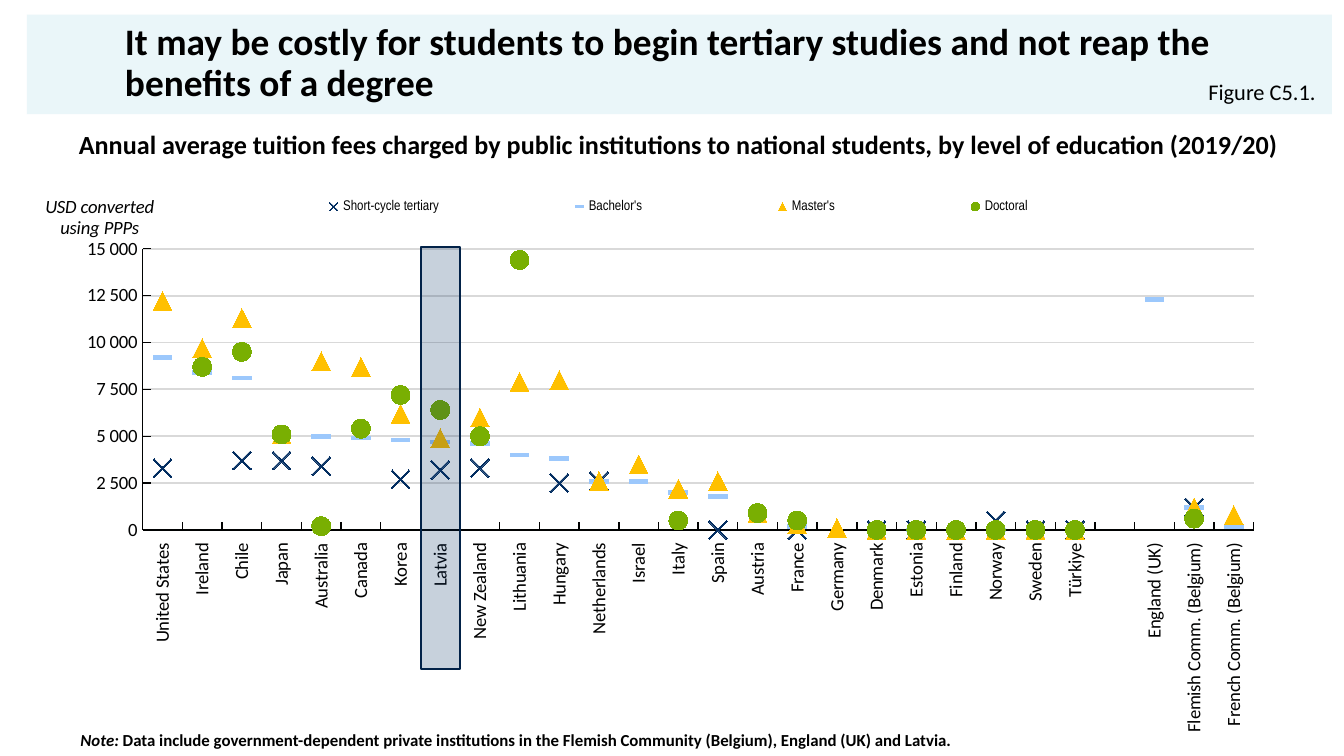
import pptx
import pptx.chart.data
import pptx.dml.color
import pptx.enum.chart
import pptx.enum.shapes
import pptx.enum.text
import pptx.oxml
import pptx.oxml.ns
import pptx.util

Inches = pptx.util.Inches
Pt = pptx.util.Pt
RGBColor = pptx.dml.color.RGBColor
XL = pptx.enum.chart
ALIGN = pptx.enum.text.PP_ALIGN
ANCHOR = pptx.enum.text.MSO_ANCHOR
qn = pptx.oxml.ns.qn

BLACK = RGBColor(0x00, 0x00, 0x00)
AXIS = RGBColor(0x00, 0x01, 0x01)
GRID = RGBColor(0xD9, 0xD9, 0xD9)
BANNER = RGBColor(0x6F, 0xC5, 0xD5)
NAVY = RGBColor(0x03, 0x2E, 0x61)
DARK_NAVY = RGBColor(0x02, 0x22, 0x48)
LIGHT_BLUE = RGBColor(0x9C, 0xC8, 0xFC)
YELLOW = RGBColor(0xFF, 0xC0, 0x00)
GREEN = RGBColor(0x79, 0xAF, 0x02)

COUNTRIES = [
    "United States", "Ireland", "Chile", "Japan", "Australia", "Canada", "Korea",
    "Latvia", "New Zealand", "Lithuania", "Hungary", "Netherlands", "Israel", "Italy",
    "Spain", "Austria", "France", "Germany", "Denmark", "Estonia", "Finland", "Norway",
    "Sweden", "Türkiye", "", "England (UK)", "Flemish Comm. (Belgium)",
    "French Comm. (Belgium)",
]
LEVELS = [
    ("Short-cycle tertiary", XL.XL_MARKER_STYLE.X, None,
     [3300, None, 3700, 3700, 3400, None, 2700, 3200, 3300, None, 2500, 2600, None, None,
      0, None, 0, None, 0, 0, None, 500, 0, 0, None, None, 1200, None]),
    ("Bachelor's", XL.XL_MARKER_STYLE.DASH, LIGHT_BLUE,
     [9200, 8400, 8100, 5100, 5000, 4900, 4800, 4700, 4600, 4000, 3800, 2600, 2600, 2000,
      1800, 900, 200, None, 0, 0, 0, 0, 0, 0, None, 12300, 1200, 200]),
    ("Master's", XL.XL_MARKER_STYLE.TRIANGLE, YELLOW,
     [12200, 9700, 11300, 5100, 9000, 8700, 6200, 4900, 6000, 7900, 8000, 2600, 3500, 2200,
      2600, 900, 300, 100, 0, 0, 0, 0, 0, 0, None, None, 1200, 800]),
    ("Doctoral", XL.XL_MARKER_STYLE.CIRCLE, GREEN,
     [None, 8700, 9500, 5100, 200, 5400, 7200, 6400, 5000, 14400, None, None, None, 500,
      None, 900, 500, None, 0, 0, 0, 0, 0, 0, None, None, 600, None]),
]


def set_font(font, size, color=BLACK, name="Calibri", bold=False, italic=False):
    font.name = name
    font.size = Pt(size)
    font.color.rgb = color
    font.bold = bold
    font.italic = italic


def add_run(p, text, size, **style):
    r = p.add_run()
    r.text = text
    set_font(r.font, size, **style)


def place(sp, left, top, width, height):
    sp.left, sp.top = Inches(left), Inches(top)
    sp.width, sp.height = Inches(width), Inches(height)


def fill_placeholder(sp, box, text, size, align, anchor=ANCHOR.TOP, bold=True):
    place(sp, *box)
    tf = sp.text_frame
    tf.word_wrap = True
    tf.auto_size = pptx.enum.text.MSO_AUTO_SIZE.NONE
    tf.vertical_anchor = anchor
    p = tf.paragraphs[0]
    pPr = p._p.get_or_add_pPr()
    pPr.set("marL", "0")
    pPr.set("indent", "0")
    pPr.append(pptx.oxml.parse_xml(f"<a:buNone {pptx.oxml.ns.nsdecls('a')}/>"))
    p.alignment = align
    p.line_spacing = 0.9
    p.space_before = Pt(0)
    add_run(p, text, size, bold=bold)


def add_tinted_rect(s, box, color, opacity, line=None):
    sp = s.shapes.add_shape(pptx.enum.shapes.MSO_SHAPE.RECTANGLE, *map(Inches, box))
    sp.shadow.inherit = False
    sp.fill.solid()
    sp.fill.fore_color.rgb = color
    clr = sp._element.spPr.find(f"{qn('a:solidFill')}/{qn('a:srgbClr')}")
    clr.append(pptx.oxml.parse_xml(
        f"<a:alpha {pptx.oxml.ns.nsdecls('a')} val=\"{opacity * 1000}\"/>"))
    if line is None:
        sp.line.fill.background()
    else:
        sp.line.color.rgb = line
        sp.line.width = Pt(1)
    return sp


def send_to_back(s, sp):
    s.shapes._spTree.insert(2, sp._element)


def set_layout(element, index, x, y, w=None, h=None, inner=False):
    for old in element.findall(qn("c:layout")):
        element.remove(old)
    parts = [("layoutTarget", "inner")] if inner else []
    parts += [("xMode", "edge"), ("yMode", "edge"), ("x", x), ("y", y)]
    if w is not None:
        parts += [("w", w), ("h", h)]
    body = "".join(f'<c:{tag} val="{val}"/>' for tag, val in parts)
    element.insert(index, pptx.oxml.parse_xml(
        f"<c:layout {pptx.oxml.ns.nsdecls('c')}><c:manualLayout>{body}"
        "</c:manualLayout></c:layout>"))


def style_axis(axis):
    set_font(axis.tick_labels.font, 10, AXIS)
    axis.major_tick_mark = XL.XL_TICK_MARK.INSIDE
    axis.minor_tick_mark = XL.XL_TICK_MARK.NONE
    axis.format.line.color.rgb = AXIS
    axis.format.line.width = Pt(0.75)


def style_value_axis(axis):
    style_axis(axis)
    axis.minimum_scale, axis.maximum_scale, axis.major_unit = 0, 15000, 2500
    axis.tick_labels.number_format = "#\\ ##0"
    axis.tick_labels.number_format_is_linked = False
    axis.has_major_gridlines = True
    axis.major_gridlines.format.line.color.rgb = GRID
    axis.major_gridlines.format.line.width = Pt(1)
    tf = axis.axis_title.text_frame
    add_run(tf.paragraphs[0], "USD converted", 10, color=AXIS, italic=True)
    add_run(tf.add_paragraph(), "using PPPs", 10, color=AXIS, italic=True)
    tf._txBody.find(qn("a:bodyPr")).set("rot", "0")
    set_layout(axis.axis_title._element, 1, 0.01, 0.02)


def style_series(series, style, color):
    series.smooth = False
    series.format.line.fill.background()
    marker = series.marker
    marker.style = style
    marker.size = 10
    if color is None:
        marker.format.fill.background()
        marker.format.line.color.rgb = NAVY
        marker.format.line.width = Pt(1.25)
    else:
        marker.format.fill.solid()
        marker.format.fill.fore_color.rgb = color
        marker.format.line.fill.background()


def add_fee_chart(s, box):
    data = pptx.chart.data.CategoryChartData()
    data.categories = COUNTRIES
    for name, _, _, values in LEVELS:
        data.add_series(name, values)
    chart = s.shapes.add_chart(
        XL.XL_CHART_TYPE.LINE_MARKERS, *map(Inches, box), data).chart
    set_font(chart.font, 8, name="Arial Narrow")
    chart.has_title = False
    chart.plots[0].vary_by_categories = False
    for series, (_, style, color, _) in zip(chart.plots[0].series, LEVELS):
        style_series(series, style, color)
    style_axis(chart.category_axis)
    chart.category_axis.tick_label_position = XL.XL_TICK_LABEL_POSITION.LOW
    txPr = chart.category_axis._element.find(qn("c:txPr"))
    txPr.find(qn("a:bodyPr")).set("rot", "-5400000")
    style_value_axis(chart.value_axis)
    chart.has_legend = True
    chart.legend.position = XL.XL_LEGEND_POSITION.TOP
    chart.legend.include_in_layout = True
    set_font(chart.legend.font, 7.5, name="Arial Narrow")
    set_layout(chart.legend._element, 1, 0.13, 0.03, 0.74, 0.04)
    plot_area = chart._chartSpace.chart.plotArea
    set_layout(plot_area, 0, 0.088, 0.125, 0.854, 0.502, inner=True)


def add_note(s, box):
    tf = s.shapes.add_textbox(*map(Inches, box)).text_frame
    tf.word_wrap = True
    p = tf.paragraphs[0]
    add_run(p, "Note: ", 9, bold=True, italic=True)
    add_run(p, "Data include government-dependent private institutions in the Flemish "
               "Community (Belgium), England (UK) and Latvia.", 9, bold=True)


def main():
    prs = pptx.Presentation()
    prs.slide_width, prs.slide_height = Inches(10), Inches(10 * 9 / 16)
    s = prs.slides.add_slide(prs.slide_layouts[3])
    title, subtitle, figure = s.placeholders
    send_to_back(s, add_tinted_rect(s, (0.2, 0.11, 9.71, 0.74), BANNER, 14))
    fill_placeholder(title, (0.83, 0.17, 8.84, 0.61),
                     "It may be costly for students to begin tertiary studies "
                     "and not reap the benefits of a degree",
                     20, ALIGN.LEFT, ANCHOR.MIDDLE)
    fill_placeholder(subtitle, (0.21, 0.93, 9.68, 0.31),
                     "Annual average tuition fees charged by public institutions "
                     "to national students, by level of education (2019/20)",
                     14, ALIGN.CENTER)
    fill_placeholder(figure, (8.68, 0.55, 1.21, 0.23), "Figure C5.1.",
                     12, ALIGN.RIGHT, bold=False)
    add_fee_chart(s, (0.21, 1.33, 9.68, 4.17))
    add_tinted_rect(s, (3.13, 1.84, 0.29, 3.14), NAVY, 22, DARK_NAVY)
    add_note(s, (0.5, 5.38, 8.18, 0.25))
    prs.save("out.pptx")


if __name__ == "__main__":
    main()
